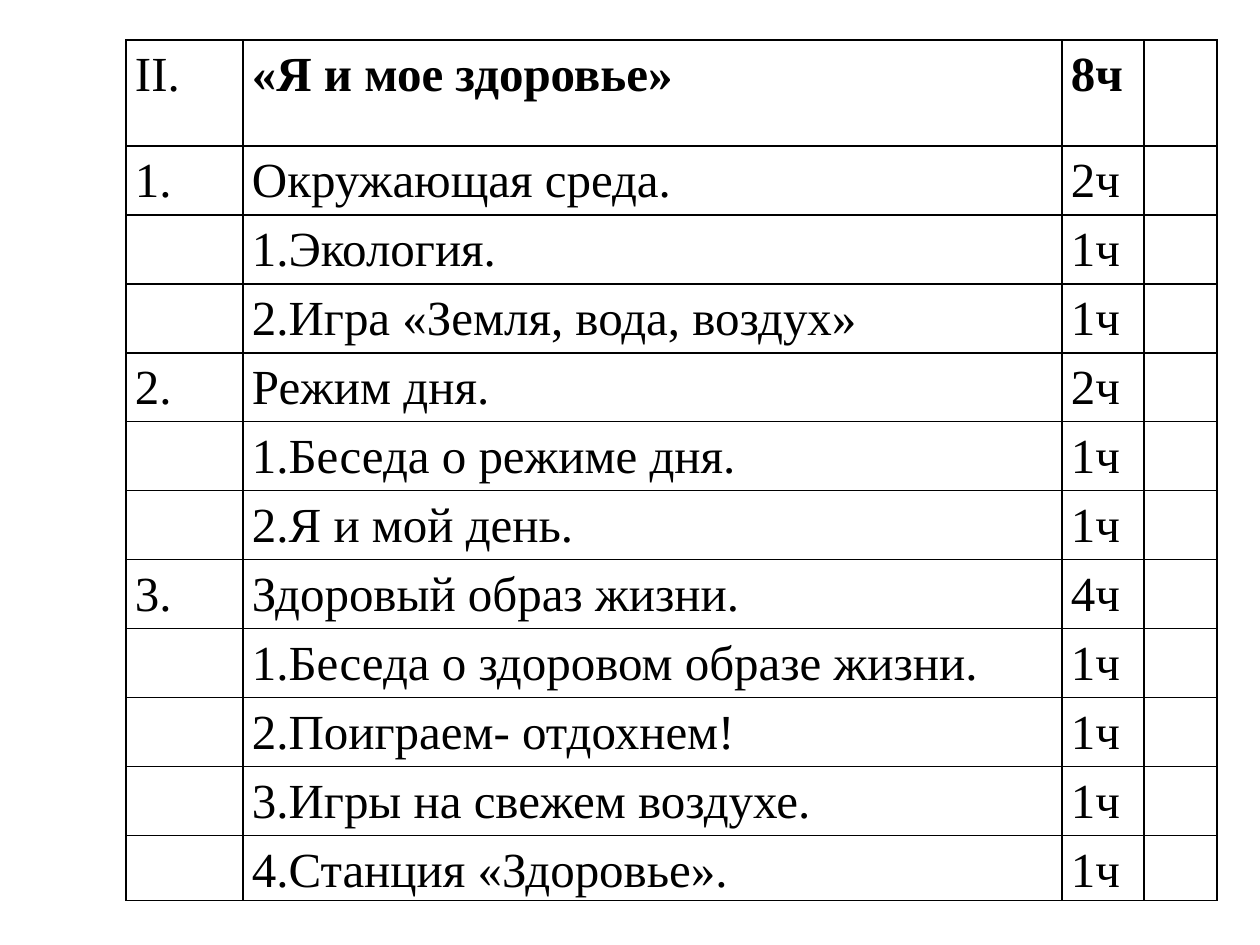
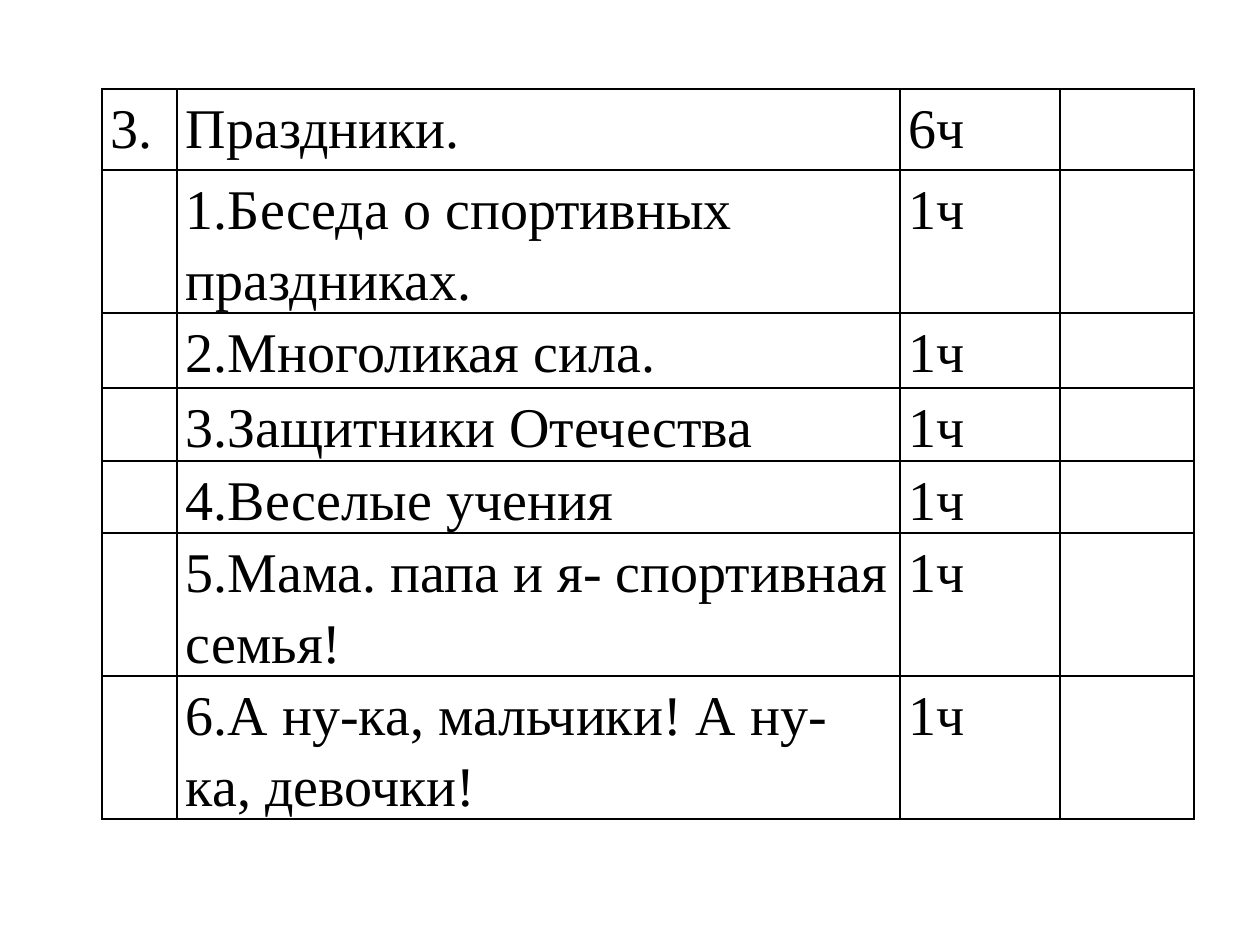
"""Build two slides of a lesson plan, each holding one ruled table."""
import pptx
import pptx.dml.color
import pptx.oxml.ns
import pptx.util
from lxml import etree

SCALE = 914400 / 126
COLORS = {"paper": "FFFFFF", "ink": "000000"}
FONT = "Times New Roman"
LINE_SPACING = 1.15
SIDE_MARGIN = 9
BORDER_POINTS = 1

plans = [
    {
        "left": 126, "top": 40, "size": 28,
        "columns": [117, 819, 82, 73],
        "heights": [106] + [69] * 10 + [65],
        "rows": [
            ("II.", "«Я и мое здоровье»", "8ч"),
            ("1.", "Окружающая среда.", "2ч"),
            ("", "1.Экология.", "1ч"),
            ("", "2.Игра «Земля, вода, воздух»", "1ч"),
            ("2.", "Режим дня.", "2ч"),
            ("", "1.Беседа о режиме дня.", "1ч"),
            ("", "2.Я и мой день.", "1ч"),
            ("3.", "Здоровый образ жизни.", "4ч"),
            ("", "1.Беседа о здоровом образе жизни.", "1ч"),
            ("", "2.Поиграем- отдохнем!", "1ч"),
            ("", "3.Игры на свежем воздухе.", "1ч"),
            ("", "4.Станция «Здоровье».", "1ч"),
        ],
        "bold_cells": {(0, 1), (0, 2)},
    },
    {
        "left": 102, "top": 89, "size": 32,
        "columns": [75, 723, 160, 134],
        "heights": [81, 143, 75, 73, 72, 143, 143],
        "rows": [
            ("3.", "Праздники.", "6ч"),
            ("", "1.Беседа о спортивных праздниках.", "1ч"),
            ("", "2.Многоликая сила.", "1ч"),
            ("", "3.Защитники Отечества", "1ч"),
            ("", "4.Веселые учения", "1ч"),
            ("", "5.Мама. папа и я- спортивная семья!", "1ч"),
            ("", "6.А ну-ка, мальчики! А ну- ка, девочки!", "1ч"),
        ],
        "bold_cells": set(),
    },
]


def px(length):
    return pptx.util.Emu(round(length * SCALE))


def style_cell(cell):
    properties = cell._tc.get_or_add_tcPr()
    for side in ("a:lnL", "a:lnR", "a:lnT", "a:lnB"):
        line = etree.SubElement(properties, pptx.oxml.ns.qn(side),
                                w=str(pptx.util.Pt(BORDER_POINTS)))
        fill = etree.SubElement(line, pptx.oxml.ns.qn("a:solidFill"))
        etree.SubElement(fill, pptx.oxml.ns.qn("a:srgbClr"), val=COLORS["ink"])
    cell.fill.solid()
    cell.fill.fore_color.rgb = pptx.dml.color.RGBColor.from_string(COLORS["paper"])
    cell.margin_left = cell.margin_right = px(SIDE_MARGIN)
    cell.margin_top = cell.margin_bottom = 0


deck = pptx.Presentation()
deck.slide_width = px(1260)
deck.slide_height = px(945)

for plan in plans:
    page = deck.slides.add_slide(deck.slide_layouts[6])
    frame = page.shapes.add_table(
        len(plan["heights"]), len(plan["columns"]),
        px(plan["left"]), px(plan["top"]),
        px(sum(plan["columns"])), px(sum(plan["heights"])))
    table = frame.table
    table.first_row = False
    table.horz_banding = False
    for column, width in zip(table.columns, plan["columns"]):
        column.width = px(width)
    for row, height in zip(table.rows, plan["heights"]):
        row.height = px(height)
    for cell in table.iter_cells():
        style_cell(cell)

    for row_index, texts in enumerate(plan["rows"]):
        for column_index, text in enumerate(texts):
            if not text:
                continue
            para = table.cell(row_index, column_index).text_frame.paragraphs[0]
            para.line_spacing = LINE_SPACING
            span = para.add_run()
            span.text = text
            span.font.name = FONT
            span.font.size = pptx.util.Pt(plan["size"])
            span.font.bold = (row_index, column_index) in plan["bold_cells"]
            span.font.color.rgb = pptx.dml.color.RGBColor.from_string(COLORS["ink"])

deck.save("out.pptx")
